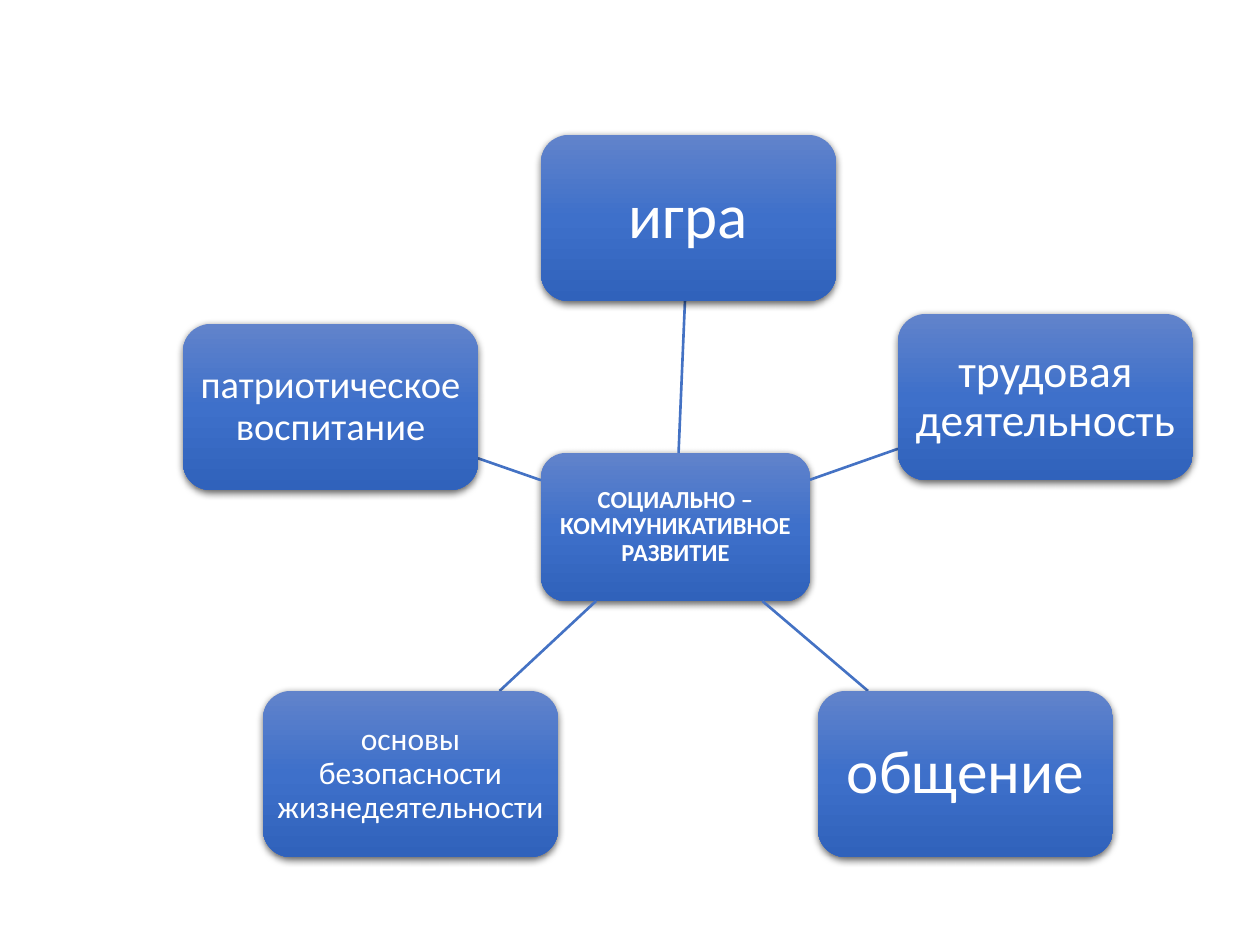
"""Build a radial diagram slide: one central topic linked to five areas."""
from lxml.etree import SubElement
from pptx import Presentation
from pptx.dml.color import RGBColor
from pptx.enum.shapes import MSO_CONNECTOR as Connector, MSO_SHAPE as Shape
from pptx.enum.text import MSO_ANCHOR as Anchor, PP_ALIGN as Align
from pptx.oxml.ns import qn
from pptx.util import Emu, Pt

PX = 914400 / 126
SLIDE_SIZE = (1260, 945)
HUB_SIZE = (269, 148)
AREA_SIZE = (295, 166)
FONT = "Calibri"
WHITE = "FFFFFF"
LINE_COLOR = "4472C4"
GRADIENT = [(0, "6183CB"), (50, "3E70CA"), (100, "3062BB")]

HUB = ("СОЦИАЛЬНО – КОММУНИКАТИВНОЕ РАЗВИТИЕ", (541, 453), 14, 5)
AREAS = [
    ("игра", (541, 135), 36, 13),
    ("трудовая деятельность", (898, 314), 26, 9),
    ("общение", (818, 691), 35, 13),
    ("основы безопасности жизнедеятельности", (263, 691), 18, 6),
    ("патриотическое воспитание", (183, 324), 22, 8),
]


def px(value):
    return Emu(round(value * PX))


def rgb(value):
    return RGBColor.from_string(value)


def add_node(tag, parent, **attributes):
    return SubElement(parent, qn(tag), {key: str(value) for key, value in attributes.items()})


def paint(box):
    """Give a box its vertical gradient and soft shadow."""
    box.line.fill.background()
    box.shadow.inherit = False
    properties = box._element.spPr
    gradient = add_node("a:gradFill", properties, rotWithShape=1)
    stops = add_node("a:gsLst", gradient)
    for position, color in GRADIENT:
        stop = add_node("a:gs", stops, pos=position * 1000)
        add_node("a:srgbClr", stop, val=color)
    add_node("a:lin", gradient, ang=5400000, scaled=0)
    properties.find(qn("a:prstGeom")).addnext(gradient)
    shadow = add_node("a:outerShdw", properties.find(qn("a:effectLst")),
                      blurRad=Pt(4.5), dist=Pt(1.5), dir=5400000,
                      algn="ctr", rotWithShape=0)
    add_node("a:alpha", add_node("a:srgbClr", shadow, val="000000"), val=63000)


def add_box(slide, topic, size, bold=False):
    """Add a rounded box holding its topic."""
    text, corner, font_size, margin = topic
    box = slide.shapes.add_shape(Shape.ROUNDED_RECTANGLE, *map(px, corner + size))
    paint(box)
    frame = box.text_frame
    frame.text = text
    frame.word_wrap = True
    frame.vertical_anchor = Anchor.MIDDLE
    frame.margin_left = frame.margin_right = px(margin)
    frame.margin_top = frame.margin_bottom = px(margin)
    para = frame.paragraphs[0]
    para.alignment = Align.CENTER
    para.line_spacing = 0.9
    font = para.runs[0].font
    font.name, font.size, font.bold = FONT, Pt(font_size), bold
    font.color.rgb = rgb(WHITE)


def middle(corner, size):
    return corner[0] + size[0] / 2, corner[1] + size[1] / 2


def edge_point(center, size, target):
    """Find where the line from a box's center to a target leaves the box."""
    dx, dy = target[0] - center[0], target[1] - center[1]
    scale = 0.5 / max(abs(dx) / size[0], abs(dy) / size[1])
    return center[0] + dx * scale, center[1] + dy * scale


def add_spoke(slide, corner):
    """Link the hub to an area along the line between their centers."""
    hub, area = middle(HUB[1], HUB_SIZE), middle(corner, AREA_SIZE)
    start = edge_point(hub, HUB_SIZE, area)
    end = edge_point(area, AREA_SIZE, hub)
    spoke = slide.shapes.add_connector(Connector.STRAIGHT, *map(px, start + end))
    spoke.line.color.rgb = rgb(LINE_COLOR)
    spoke.line.width = Pt(1.5)
    add_node("a:effectLst", spoke._element.spPr)


def main():
    deck = Presentation()
    deck.slide_width, deck.slide_height = map(px, SLIDE_SIZE)
    slide = deck.slides.add_slide(deck.slide_layouts[6])
    add_box(slide, HUB, HUB_SIZE, bold=True)
    for area in AREAS:
        add_spoke(slide, area[1])
        add_box(slide, area, AREA_SIZE)
    deck.save("out.pptx")


if __name__ == "__main__":
    main()
